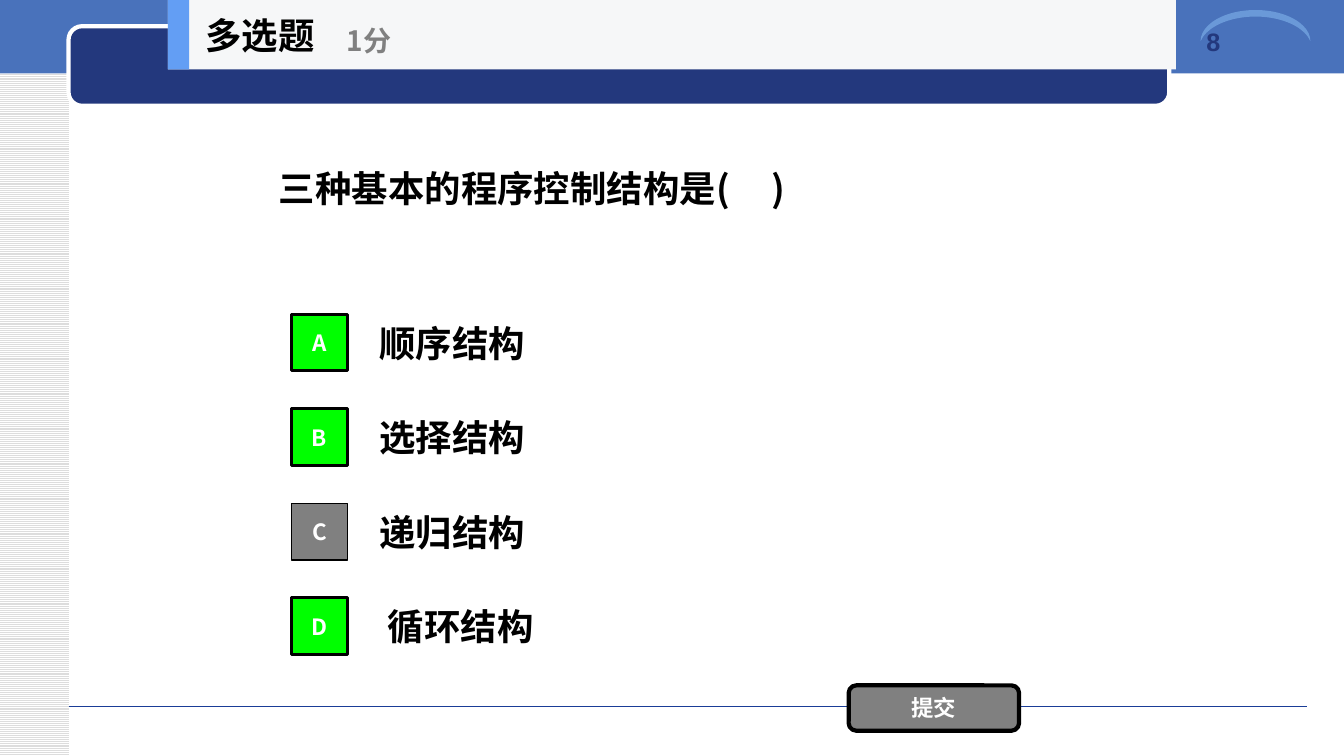
from lxml import etree
from pptx import Presentation
from pptx.dml.color import RGBColor
from pptx.enum.dml import MSO_PATTERN
from pptx.enum.shapes import MSO_CONNECTOR, MSO_SHAPE
from pptx.enum.text import MSO_ANCHOR, MSO_AUTO_SIZE, PP_ALIGN
from pptx.oxml.ns import qn
from pptx.util import Inches, Pt

RECT = MSO_SHAPE.RECTANGLE
ROUNDED = MSO_SHAPE.ROUNDED_RECTANGLE
MOON = MSO_SHAPE.MOON
STRIPES = MSO_PATTERN.LIGHT_HORIZONTAL
STRAIGHT = MSO_CONNECTOR.STRAIGHT
LEFT, CENTER = PP_ALIGN.LEFT, PP_ALIGN.CENTER
TOP, MIDDLE = MSO_ANCHOR.TOP, MSO_ANCHOR.MIDDLE
NO_FIT = MSO_AUTO_SIZE.NONE

WIDTH, HEIGHT = Inches(13.33), Inches(7.5)
COLUMN, ROW = WIDTH / 40, HEIGHT / 32
CJK, LATIN = "Noto Sans CJK SC", "Arial"
COLORS = {
    "white": "FFFFFF", "black": "000000", "grey": "808080", "stripe": "DDDDDD",
    "band": "4972BB", "navy": "23387D", "rule": "1A3D97", "arc": "6A99D8",
    "header": "F6F7F8", "accent": "639EF4", "correct": "00FF00",
}
CHOICES = [
    ("A", "顺序结构", True),
    ("B", "选择结构", True),
    ("C", "递归结构", False),
    ("D", " 循环结构", True),
]


def color(name):
    return RGBColor.from_string(COLORS[name])


def grid(left, top, columns, rows):
    return (round(left * COLUMN), round(top * ROW),
            round(columns * COLUMN), round(rows * ROW))


def write(holder, text, size, ink, font=CJK, align=LEFT, anchor=MIDDLE):
    frame = holder.text_frame
    frame.word_wrap = True
    frame.auto_size = NO_FIT
    frame.vertical_anchor = anchor
    frame.margin_left = frame.margin_right = Inches(0.1)
    frame.margin_top = frame.margin_bottom = Inches(0.05)
    paragraph = frame.paragraphs[0]
    paragraph.text = text
    paragraph.alignment = align
    style = paragraph.font
    style.name, style.size, style.bold = font, Pt(size), True
    style.color.rgb = color(ink)
    properties = paragraph._p.pPr.find(qn("a:defRPr"))
    etree.SubElement(properties, qn("a:ea"), typeface=font)


def add_label(slide, cell, text, size=26, ink="black", **style):
    label = slide.shapes.add_textbox(*grid(*cell))
    write(label, text, size, ink, **style)


def add_block(slide, cell, fill, kind=RECT, border=None, weight=0):
    block = slide.shapes.add_shape(kind, *grid(*cell))
    block.shadow.inherit = False
    block.fill.solid()
    block.fill.fore_color.rgb = color(fill)
    if border:
        block.line.color.rgb = color(border)
        block.line.width = Pt(weight)
    else:
        block.line.fill.background()
    return block


def add_button(slide, cell, text, fill, weight, kind=RECT):
    button = add_block(slide, cell, fill, kind, "black", weight)
    write(button, text, 16, "white", align=CENTER)


def add_backdrop(slide):
    margin = add_block(slide, (0, 0, 2.04, 32), "white")
    margin.fill.patterned()
    margin.fill.pattern = STRIPES
    margin.fill.fore_color.rgb = color("stripe")
    margin.fill.back_color.rgb = color("white")
    add_block(slide, (0, -0.13, 40, 3.24), "band")

    left, top, length, _ = grid(2.04, 29.91, 36.87, 0)
    rule = slide.shapes.add_connector(STRAIGHT, left, top, left + length, top)
    rule.line.color.rgb = color("rule")
    rule.line.width = Pt(0.5)
    etree.SubElement(rule._element.spPr, qn("a:effectLst"))

    banner = add_block(slide, (2.04, 1.11, 32.76, 3.37), "navy", ROUNDED, "white", 3)
    banner.adjustments[0] = 0.17
    arc = add_block(slide, (36.9, -1.24, 0.93, 4.65), "arc", MOON)
    arc.adjustments[0] = 0.21
    arc.rotation = 90
    add_label(slide, (35.61, 0.9, 3.63, 3.03), "8", 18, "navy", font=LATIN, anchor=TOP)


def add_question(slide):
    question = slide.shapes.title
    question.left, question.top, question.width, question.height = grid(8, 2.94, 24, 10)
    write(question, "三种基本的程序控制结构是(     )", 26, "black")


def add_choice(slide, index, letter, answer, correct):
    top = 13 + 4 * index
    add_label(slide, (11, top, 21, 3), answer)
    fill, weight = ("correct", 2) if correct else ("grey", 1)
    add_button(slide, (8.67, top + 0.3, 1.68, 2.4), letter, fill, weight)


def add_header(slide):
    add_block(slide, (5, 0, 30, 2.94), "header")
    add_block(slide, (5, 0, 0.63, 2.94), "accent")
    add_label(slide, (5.82, 0, 6.24, 2.94), "多选题")
    add_label(slide, (10.02, 0.51, 7.5, 2.39), "1分", 20, "grey")


def main():
    deck = Presentation()
    deck.slide_width, deck.slide_height = WIDTH, HEIGHT
    slide = deck.slides.add_slide(deck.slide_layouts.get_by_name("Title Only"))
    add_backdrop(slide)
    add_question(slide)
    for index, choice in enumerate(CHOICES):
        add_choice(slide, index, *choice)
    add_button(slide, (25.26, 29.01, 5.07, 1.92), "提交", "grey", 3, ROUNDED)
    add_header(slide)
    deck.save("out.pptx")


if __name__ == "__main__":
    main()
